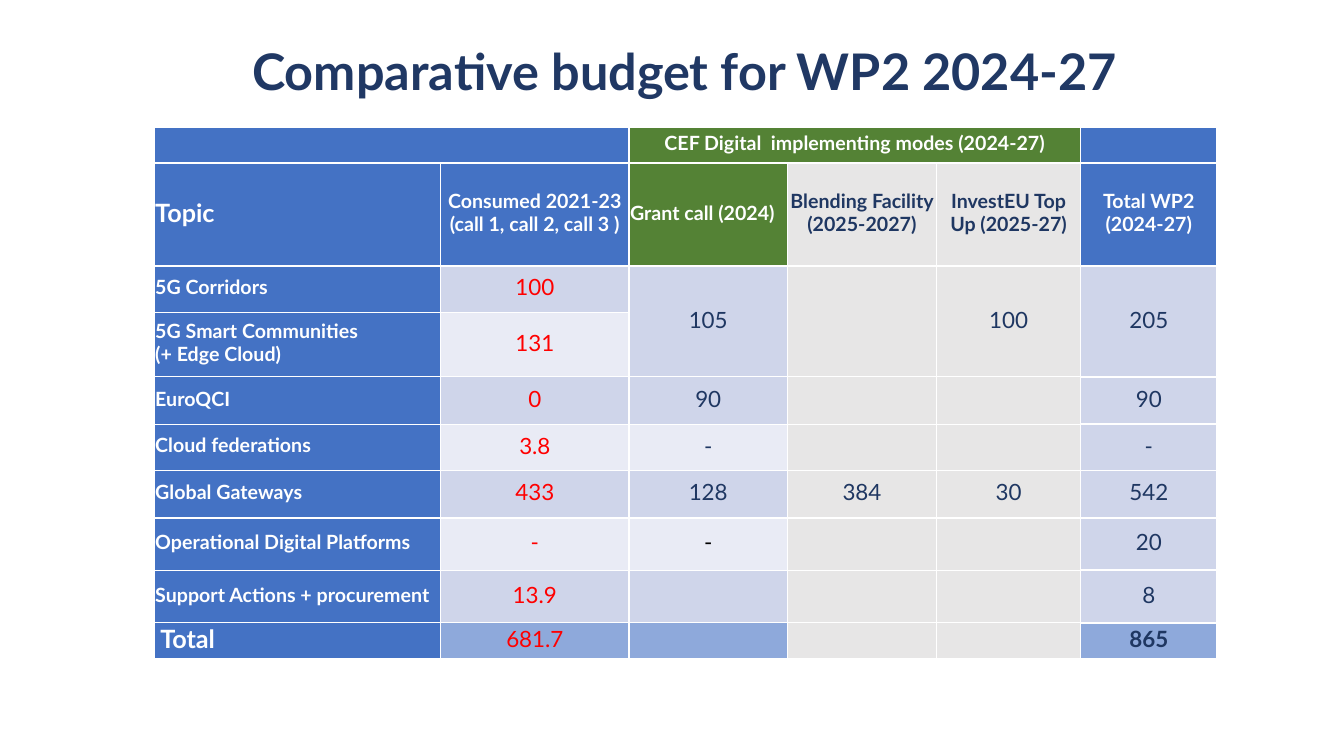
from pptx import Presentation
from pptx.dml.color import RGBColor
from pptx.enum.text import MSO_ANCHOR as Anchor, PP_ALIGN as Align
from pptx.oxml.ns import qn
from pptx.util import Inches, Pt
from lxml.etree import SubElement

WIDTH, HEIGHT = 13.33, 7.5
NAVY, TITLE_NAVY, WHITE, RED, BLACK = "1F3762", "203864", "FFFFFF", "FF0000", "000000"

COLUMNS = [2.84, 1.87, 1.57, 1.48, 1.43, 1.35]
ROWS = [0.36, 1.02, 0.46, 0.64, 0.47, 0.46, 0.47, 0.52, 0.52, 0.36]
LAST_COLUMN, TOTAL_ROW = len(COLUMNS) - 1, len(ROWS) - 1

BUDGET = [
    ["", "", "CEF Digital  implementing modes (2024-27)", "", "", ""],
    ["Topic", "Consumed 2021-23 (call 1, call 2, call 3 )", "Grant call (2024)",
     "Blending Facility (2025-2027)", "InvestEU Top Up (2025-27)", "Total WP2 (2024-27)"],
    ["5G Corridors", "100", "105", "", "100", "205"],
    ["5G Smart Communities\n(+ Edge Cloud)", "131", "", "", "", ""],
    ["EuroQCI", "0", "90", "", "", "90"],
    ["Cloud federations", "3.8", "-", "", "", "-"],
    ["Global Gateways", "433", "128", "384", "30", "542"],
    ["Operational Digital Platforms", "-", "-", "", "", "20"],
    ["Support Actions + procurement", "13.9", "", "", "", "8"],
    ["Total", "681.7", "", "", "", "865"],
]

# One letter per cell, one word per row
FILLS = {"B": "4472C4", "G": "548235", "E": "E7E6E6",
         "L": "CFD5EA", "P": "E9EBF5", "T": "8EA9DB"}
FILL_MAP = ("BBGGGB BBGEEB BLLEEL BPLEEL BLLEEL "
            "BPPEEL BLLEEL BPPEEL BLLEEL BTTEET").split()

# First and last cell of each merged area, as (row, column)
MERGES = [((0, 0), (0, 1)), ((0, 2), (0, 4))] + [
    ((2, column), (3, column)) for column in range(2, LAST_COLUMN + 1)]


def color(value):
    return RGBColor.from_string(value)


def set_attributes(target, values):
    for name, value in values.items():
        setattr(target, name, value)


def format_paragraph(para, size, ink, bold, align):
    para.alignment = align
    for font in [para.font] + [span.font for span in para.runs]:
        set_attributes(font, {"name": "Lato", "size": Pt(size), "bold": bold})
        font.color.rgb = color(ink)


def add_title(page, text):
    box = page.shapes.add_textbox(Inches(1.73), Inches(0.4), Inches(10.12), Inches(0.67))
    set_attributes(box.text_frame, {"word_wrap": True, "vertical_anchor": Anchor.MIDDLE})
    para = box.text_frame.paragraphs[0]
    para.add_run().text = text
    para.line_spacing = 0.9
    format_paragraph(para, 36, TITLE_NAVY, True, Align.CENTER)


def add_borders(cell, row, column):
    """White rules, heavier around the headers and in the total column."""
    heavy = column == LAST_COLUMN
    widths = {
        "a:lnL": 1,
        "a:lnR": 1,
        "a:lnT": 1.5 if heavy or row <= 2 else 1,
        "a:lnB": 1.5 if row <= 1 or (heavy and row < TOTAL_ROW) else 1,
    }
    properties = cell._tc.get_or_add_tcPr()
    for tag, width in widths.items():
        line = SubElement(properties, qn(tag), w=str(Pt(width)))
        fill = SubElement(line, qn("a:solidFill"))
        SubElement(fill, qn("a:srgbClr"), val=WHITE)


def text_style(row, column):
    """Size, colour, weight and alignment that follow from a cell's place."""
    align = Align.JUSTIFY if column == 0 or (row, column) == (1, 2) else Align.CENTER
    if column == 0:
        return 18 if row in (1, TOTAL_ROW) else 14, WHITE, True, align
    if row <= 1:
        return 14, NAVY if FILL_MAP[row][column] == "E" else WHITE, True, align
    if column == 1:
        return 16, RED, False, align
    ink = BLACK if (row, column) == (7, 2) else NAVY
    return 16, ink, (row, column) == (TOTAL_ROW, LAST_COLUMN), align


def fill_cell(cell, row, column):
    indented = (row, column) == (TOTAL_ROW, 0)
    set_attributes(cell, {
        "margin_left": Inches(0.06 if indented else 0.01),
        "margin_top": Inches(0.01),
        "margin_right": Inches(0.01),
        "margin_bottom": Inches(0.05),
        "vertical_anchor": Anchor.MIDDLE,
    })
    add_borders(cell, row, column)
    cell.fill.solid()
    cell.fill.fore_color.rgb = color(FILLS[FILL_MAP[row][column]])
    if BUDGET[row][column]:
        cell.text = BUDGET[row][column]
    for para in cell.text_frame.paragraphs:
        format_paragraph(para, *text_style(row, column))


def add_budget_table(page):
    table = page.shapes.add_table(
        len(ROWS), len(COLUMNS), Inches(1.53), Inches(1.26),
        Inches(sum(COLUMNS)), Inches(sum(ROWS))).table
    set_attributes(table, {"first_row": False, "horz_banding": False})
    for column, width in zip(table.columns, COLUMNS):
        column.width = Inches(width)
    for row, height in zip(table.rows, ROWS):
        row.height = Inches(height)
    for first, last in MERGES:
        table.cell(*first).merge(table.cell(*last))
    for row in range(len(ROWS)):
        for column in range(len(COLUMNS)):
            fill_cell(table.cell(row, column), row, column)


def main():
    deck = Presentation()
    set_attributes(deck, {"slide_width": Inches(WIDTH), "slide_height": Inches(HEIGHT)})
    page = deck.slides.add_slide(deck.slide_layouts[6])
    add_title(page, "Comparative budget for WP2 2024-27")
    add_budget_table(page)
    deck.save("out.pptx")


if __name__ == "__main__":
    main()
